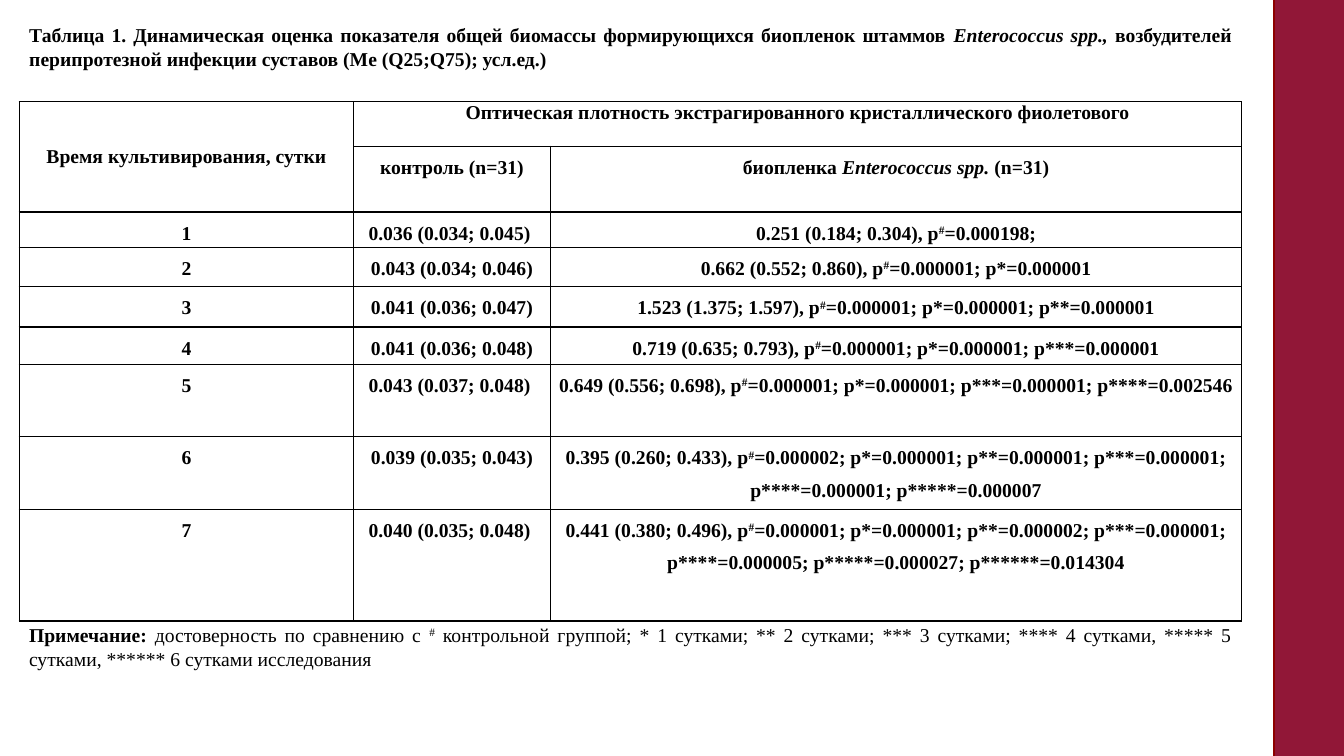
from lxml.etree import SubElement
from pptx import Presentation
from pptx.dml.color import RGBColor
from pptx.enum.shapes import MSO_SHAPE
from pptx.enum.text import MSO_ANCHOR, MSO_AUTO_SIZE, PP_ALIGN
from pptx.oxml.ns import qn
from pptx.util import Pt

BLACK = RGBColor(0x00, 0x00, 0x00)
WINE = RGBColor(0x91, 0x17, 0x37)
RED = RGBColor(0x8E, 0x00, 0x00)
FACE = "Times New Roman"
SIZE = 14

TITLE = [
    ("Таблица 1. Динамическая оценка показателя общей биомассы формирующихся биопленок штаммов ", ""),
    ("Enterococcus spp.,", "italic"),
    (" возбудителей перипротезной инфекции суставов (Me (Q25;Q75); усл.ед.)", ""),
]
NOTE = [
    ("Примечание: ", "bold"),
    ("достоверность по сравнению с ", ""),
    ("#", "super"),
    (" контрольной группой; * 1 сутками; ** 2 сутками; *** 3 сутками; "
     "**** 4 сутками, ***** 5 сутками, ****** 6 сутками исследования", ""),
]
TIME = "Время культивирования, сутки"
DENSITY = "Оптическая плотность экстрагированного кристаллического фиолетового"
CONTROL = "контроль (n=31)"
FILM = [("биопленка ", ""), ("Enterococcus spp.", "italic"), (" (n=31)", "")]
DAYS = [
    ("0.036 (0.034; 0.045)\u00a0", "0.251 (0.184; 0.304)", "0.000198;"),
    ("0.043 (0.034; 0.046)", "0.662 (0.552; 0.860)", "0.000001; p*=0.000001"),
    ("0.041 (0.036; 0.047)", "1.523 (1.375; 1.597)", "0.000001; p*=0.000001; p**=0.000001"),
    ("0.041 (0.036; 0.048)", "0.719 (0.635; 0.793)", "0.000001; p*=0.000001; p***=0.000001"),
    ("0.043 (0.037; 0.048)\u00a0", "0.649 (0.556; 0.698)",
     "0.000001; p*=0.000001; p***=0.000001; p****=0.002546"),
    ("0.039 (0.035; 0.043)", "0.395 (0.260; 0.433)",
     "0.000002; p*=0.000001; p**=0.000001; p***=0.000001; p****=0.000001; p*****=0.000007"),
    ("0.040 (0.035; 0.048)\u00a0", "0.441 (0.380; 0.496)",
     "0.000001; p*=0.000001; p**=0.000002; p***=0.000001; p****=0.000005; "
     "p*****=0.000027; p******=0.014304"),
]
COLS = [239, 140.4, 494]
ROWS = [31.7, 42.3, 25.2, 28.1, 28.8, 26.6, 51.8, 51.8, 79.9]


def write(frame, runs, align, bold=True, space=1.0):
    par = frame.paragraphs[0]
    par.alignment = align
    par.line_spacing = space
    font = par.font
    font.name, font.size, font.bold = FACE, Pt(SIZE), bold
    font.color.rgb = BLACK
    for text, mark in runs:
        run = par.add_run()
        run.text = text
        if mark == "italic":
            run.font.italic = True
        elif mark == "bold":
            run.font.bold = True
        elif mark == "super":
            run.font._element.set("baseline", "30000")


def border(cell):
    props = cell._tc.get_or_add_tcPr()
    for side in ("lnL", "lnR", "lnT", "lnB"):
        line = SubElement(props, qn(f"a:{side}"), w=str(Pt(1)))
        fill = SubElement(line, qn("a:solidFill"))
        SubElement(fill, qn("a:srgbClr"), val=str(BLACK))


def add_band(slide, box):
    band = slide.shapes.add_shape(MSO_SHAPE.RECTANGLE, *map(Pt, box))
    band.shadow.inherit = False
    band.fill.solid()
    band.fill.fore_color.rgb = WINE
    band.line.color.rgb = RED
    band.line.width = Pt(1)


def add_title(slide, box):
    title = slide.shapes.title
    title.left, title.top, title.width, title.height = map(Pt, box)
    frame = title.text_frame
    frame.auto_size = MSO_AUTO_SIZE.NONE
    frame.vertical_anchor = MSO_ANCHOR.MIDDLE
    write(frame, TITLE, PP_ALIGN.JUSTIFY)


def add_note(slide, box):
    frame = slide.shapes.add_textbox(*map(Pt, box)).text_frame
    frame.word_wrap = True
    write(frame, NOTE, PP_ALIGN.JUSTIFY, bold=False)


def add_grid(slide, left, top):
    size = map(Pt, (left, top, sum(COLS), sum(ROWS)))
    table = slide.shapes.add_table(len(ROWS), len(COLS), *size).table
    table.first_row = table.horz_banding = False
    for col, width in zip(table.columns, COLS):
        col.width = Pt(width)
    for row, height in zip(table.rows, ROWS):
        row.height = Pt(height)
    for cell in table.iter_cells():
        cell.margin_left = cell.margin_right = Pt(3.6)
        cell.margin_top = cell.margin_bottom = Pt(0)
        border(cell)
        cell.fill.background()
    head = table.cell(0, 0)
    head.merge(table.cell(1, 0))
    head.margin_top = Pt(SIZE * 1.7)
    table.cell(0, 1).merge(table.cell(0, 2))

    def put(row, col, runs, space=1.5):
        write(table.cell(row, col).text_frame, runs, PP_ALIGN.CENTER, space=space)

    put(0, 0, [(TIME, "")])
    put(0, 1, [(DENSITY, "")], 1.0)
    put(1, 1, [(CONTROL, "")])
    put(1, 2, FILM)
    for day, (base, film, odds) in enumerate(DAYS, 1):
        put(day + 1, 0, [(str(day), "")])
        put(day + 1, 1, [(base, "")])
        put(day + 1, 2, [(f"{film}, p", ""), ("#", "super"), (f"={odds}", "")])


def main():
    deck = Presentation()
    deck.slide_width, deck.slide_height = Pt(960), Pt(540)
    slide = deck.slides.add_slide(deck.slide_layouts[5])
    left, width = 13.7, sum(COLS)
    add_band(slide, (910, -6, 59, 551))
    add_title(slide, (left, 13, width, 41))
    add_grid(slide, left, 72.7)
    add_note(slide, (left, 441.4, width, 41))
    deck.save("out.pptx")


if __name__ == "__main__":
    main()
